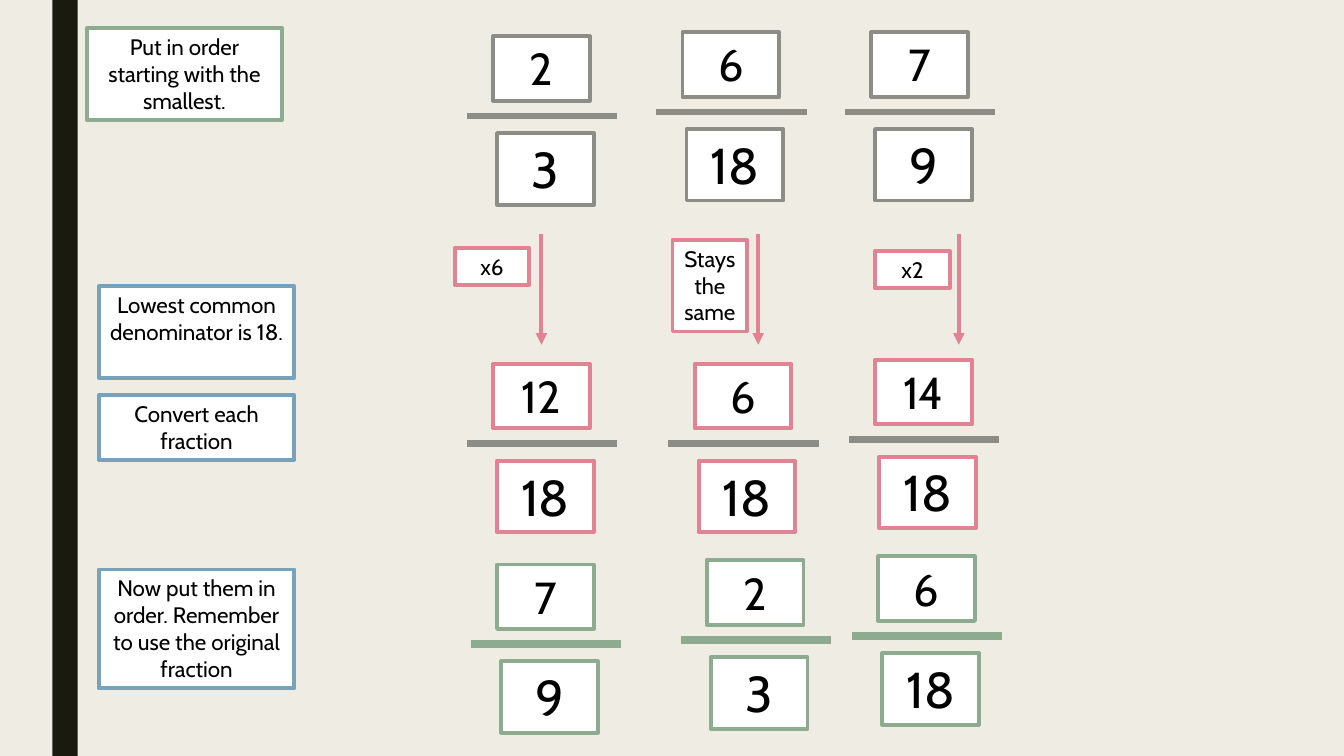
from lxml.etree import SubElement
from pptx import Presentation
from pptx.dml.color import RGBColor
from pptx.enum.shapes import MSO_CONNECTOR as Connector, MSO_SHAPE as Preset
from pptx.enum.text import MSO_ANCHOR as Anchor, PP_ALIGN as Align
from pptx.oxml.ns import qn
from pptx.util import Inches, Pt

GREY, GREEN, BLUE, PINK = "8C8D86", "8DAB8E", "77A2BB", "E28394"


def color(value):
    return RGBColor.from_string(value)


class FractionSlide:
    font = "Cabin"
    ink = "000000"
    paper = "FFFFFF"
    outline = 2.75

    def __init__(self, deck, background):
        self.page = deck.slides.add_slide(deck.slide_layouts[6])
        self.page.background.fill.solid()
        self.page.background.fill.fore_color.rgb = color(background)
        self.shapes = self.page.shapes

    def stripe(self, left, top, width, height, fill):
        stripe = self.shapes.add_shape(
            Preset.RECTANGLE, Inches(left), Inches(top), Inches(width), Inches(height))
        stripe.shadow.inherit = False
        stripe.fill.solid()
        stripe.fill.fore_color.rgb = color(fill)
        stripe.line.fill.background()

    def box(self, left, top, width, height, text, border, size=16, shapes=None):
        box = (shapes or self.shapes).add_textbox(
            Inches(left), Inches(top), Inches(width), Inches(height))
        box.fill.solid()
        box.fill.fore_color.rgb = color(self.paper)
        box.line.color.rgb = color(border)
        box.line.width = Pt(self.outline)
        frame = box.text_frame
        frame.word_wrap = True
        frame.vertical_anchor = Anchor.TOP
        frame.text = text
        para = frame.paragraphs[0]
        para.alignment = Align.CENTER
        span = para.runs[0]
        span.font.name = self.font
        span.font.size = Pt(size)
        span.font.color.rgb = color(self.ink)

    def line(self, start, end, stroke, width, shapes=None):
        line = (shapes or self.shapes).add_connector(
            Connector.STRAIGHT, *(Inches(value) for value in (*start, *end)))
        line.line.color.rgb = color(stroke)
        line.line.width = Pt(width)
        SubElement(line._element.spPr, qn("a:effectLst"))
        return line

    def arrow(self, x, top, bottom, stroke):
        arrow = self.line((x, top), (x, bottom), stroke, self.outline)
        SubElement(arrow.line._get_or_add_ln(), qn("a:tailEnd"), type="triangle")

    def fraction(self, left, top, numerator, denominator, border, bar, bar_width):
        shapes = self.page.shapes.add_group_shape().shapes
        self.box(left, top, 0.96, 0.64, numerator, border, 32, shapes)
        self.box(left + 0.04, top + 0.96, 0.96, 0.71, denominator, border, 36, shapes)
        bar_y = top + 0.79
        self.line((left - 0.26, bar_y), (left + 1.23, bar_y), bar, bar_width, shapes)


def main():
    deck = Presentation()
    deck.slide_width, deck.slide_height = Inches(13.33), Inches(7.5)
    slide = FractionSlide(deck, "EFEDE3")
    slide.stripe(0.52, 0, 0.25, 7.5, "191B0E")

    instructions = [
        (0.86, 0.28, 0.91, "Put in order starting with the smallest.", GREEN),
        (0.98, 2.84, 0.91, "Lowest common denominator is 18.", BLUE),
        (0.98, 3.92, 0.64, "Convert each fraction", BLUE),
        (0.98, 5.65, 1.18,
         "Now put them in order. Remember to use the original fraction", BLUE),
    ]
    for left, top, height, text, border in instructions:
        slide.box(left, top, 1.94, height, text, border)

    fraction_rows = [
        (GREY, GREY, 4.5,
         [(4.89, 0.36, "2", "3"), (6.77, 0.32, "6", "18"), (8.64, 0.32, "7", "9")]),
        (PINK, GREY, 4.5,
         [(4.89, 3.61, "12", "18"), (6.89, 3.61, "6", "18"), (8.68, 3.57, "14", "18")]),
        (GREEN, GREEN, 6,
         [(4.93, 5.6, "7", "9"), (7.01, 5.56, "2", "3"), (8.71, 5.52, "6", "18")]),
    ]
    for border, bar, bar_width, fractions in fraction_rows:
        for left, top, numerator, denominator in fractions:
            slide.fraction(left, top, numerator, denominator, border, bar, bar_width)

    conversions = [
        (5.37, 4.51, 2.46, 0.37, "x6"),
        (7.52, 6.67, 2.38, 0.91, "Stays the same"),
        (9.51, 8.68, 2.49, 0.37, "x2"),
    ]
    for arrow_x, left, top, height, text in conversions:
        slide.arrow(arrow_x, 2.32, 3.42, PINK)
        slide.box(left, top, 0.74, height, text, PINK)

    deck.save("out.pptx")


if __name__ == "__main__":
    main()
